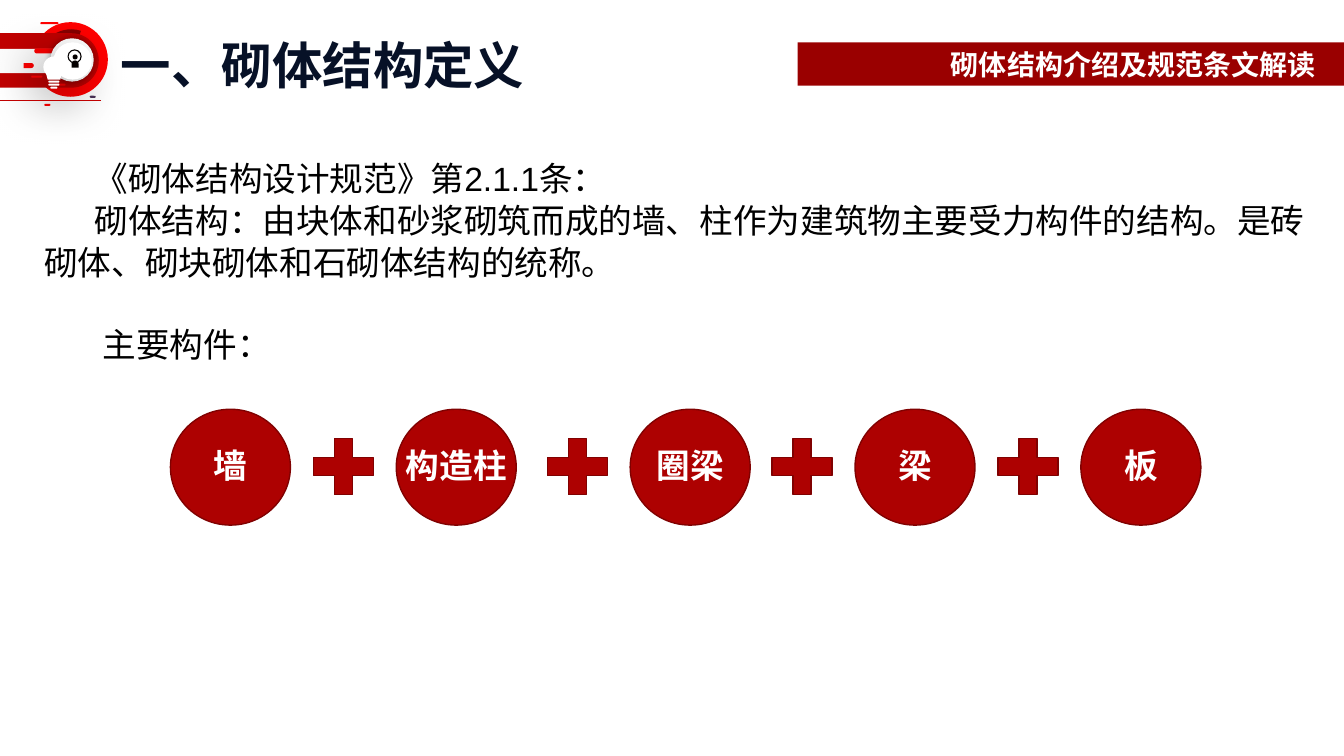
"""Build the slide defining masonry structure and its main members."""
from lxml import etree
from pptx import Presentation
from pptx.dml.color import RGBColor
from pptx.enum import shapes, text
from pptx.oxml import ns
from pptx.util import Inches, Pt

CJK = "Noto Sans CJK SC"
MSO = shapes.MSO_SHAPE
ALIGN = text.PP_ALIGN
ANCHOR = text.MSO_ANCHOR
RED, BRICK, EDGE, INK, WHITE = "FF0000", "AD0101", "800101", "040000", "FFFFFF"

TITLE = "一、砌体结构定义"
BANNER = "砌体结构介绍及规范条文解读"
DEFINITION = [
    "《砌体结构设计规范》第2.1.1条：",
    "砌体结构：由块体和砂浆砌筑而成的墙、柱作为建筑物主要受力构件的结构。是砖砌体、砌块砌体和石砌体结构的统称。",
]
MEMBERS_HEADING = ["主要构件："]
MEMBERS = [("墙", 1.69), ("构造柱", 3.93), ("圈梁", 6.25), ("梁", 8.48), ("板", 10.72)]

PILL, TAB, OVAL = MSO.ROUNDED_RECTANGLE, MSO.ROUND_2_SAME_RECTANGLE, MSO.OVAL
EMBLEM = [
    (OVAL, (0.33, 0.22, 0.74, 0.74), RED, {}),
    (PILL, (0.89, 0.95, 0.06, 0.02), "4A3359", {"adj": [0.5]}),
    (PILL, (0.44, 1.03, 0.06, 0.02), RED, {"adj": [0.5]}),
    (MSO.PIE, (0.39, 0.29, 0.63, 0.63), "860000", {"rot": 180, "adj": [0, 64.8]}),
    (PILL, (0.4, 0.22, 0.18, 0.02), RED, {"adj": [0.5]}),
    (TAB, (0.22, 0.11, 0.54, 0.98), "C00000", {"rot": 90, "adj": [0.5, 0]}),
    (TAB, (0.29, 0.19, 0.24, 0.83), "FCFCFC", {"rot": 90, "adj": [0.5, 0]}),
    (TAB, (0.26, 0.6, 0.05, 0.1), RED, {"rot": 90, "adj": [0.5, 0]}),
    (PILL, (0.34, 0.48, 0.3, 0.05), RED, {"adj": [0.5]}),
    (PILL, (0.31, 0.75, 0.11, 0.02), RED, {"adj": [0.5]}),
    (PILL, (0.54, 0.83, 0.11, 0.02), RED, {"adj": [0.5]}),
    (OVAL, (0.5, 0.38, 0.43, 0.43), WHITE, {"shadow": (40, 5, 0, 0)}),
    (OVAL, (0.53, 0.42, 0.38, 0.37), WHITE, {"shadow": (60, 37, 16, 130)}),
]
SEARCH = [
    (OVAL, (0.72, 0.54, 0.05, 0.05), INK, {}),
    (TAB, (0.71, 0.6, 0.07, 0.07), INK, {"adj": [0.5, 0]}),
    (MSO.DONUT, (0.67, 0.49, 0.14, 0.14), INK, {"adj": [0.08]}),
]
HANDLE = [(0.68, 0.61), (0.62, 0.66), (0.64, 0.68), (0.69, 0.63)]
BULB = [
    (OVAL, (0.43, 0.56, 0.21, 0.21), WHITE, {}),
    (MSO.TRAPEZOID, (0.45, 0.7, 0.17, 0.09), WHITE, {"rot": 180}),
    (PILL, (0.48, 0.8, 0.11, 0.02), WHITE, {"adj": [0.5]}),
    (PILL, (0.48, 0.83, 0.11, 0.02), WHITE, {"adj": [0.5]}),
    (PILL, (0.5, 0.86, 0.07, 0.02), WHITE, {"adj": [0.5]}),
]
FILAMENT = [(0.5, 0.78), (0.5, 0.73), (0.47, 0.68), (0.6, 0.68), (0.57, 0.73), (0.56, 0.78)]


def rgb(value):
    """Turn a hex string into a colour."""
    return RGBColor.from_string(value)


def paint(sp, fill=None, line=None, width=1):
    """Set fill and line, and drop the theme shadow."""
    sp.shadow.inherit = False
    if fill:
        sp.fill.solid()
        sp.fill.fore_color.rgb = rgb(fill)
    else:
        sp.fill.background()
    if line:
        sp.line.color.rgb = rgb(line)
        sp.line.width = Pt(width)
    else:
        sp.line.fill.background()


def cast_shadow(sp, alpha, blur, dist, angle):
    """Give a shape a soft outer black shadow."""
    effects = sp._element.spPr.find(ns.qn("a:effectLst"))
    shadow = etree.SubElement(effects, ns.qn("a:outerShdw"), blurRad=str(Pt(blur)),
                              dist=str(Pt(dist)), dir=str(angle * 60000), rotWithShape="0")
    color = etree.SubElement(shadow, ns.qn("a:srgbClr"), val="000000")
    etree.SubElement(color, ns.qn("a:alpha"), val=str(alpha * 1000))


def add_preset(parent, kind, box, fill, line=None, rot=0, adj=(), shadow=None):
    """Add one painted preset shape."""
    sp = parent.add_shape(kind, *map(Inches, box))
    sp.rotation = rot
    for i, value in enumerate(adj):
        sp.adjustments[i] = value
    paint(sp, fill, line)
    if shadow:
        cast_shadow(sp, *shadow)
    return sp


def add_outline(parent, points, closed, **look):
    """Add a polygon or an open polyline."""
    builder = parent.build_freeform(*points[0], scale=Inches(1))
    builder.add_line_segments(points[1:], close=closed)
    paint(builder.convert_to_shape(), **look)


def write(sp, lines, size, color, font="Arial", bold=False, align=ALIGN.LEFT,
          anchor=ANCHOR.MIDDLE, wrap=True, indent=0, spacing=None, margins=None):
    """Fill a shape with formatted paragraphs."""
    tf = sp.text_frame
    tf.word_wrap = wrap
    tf.vertical_anchor = anchor
    if margins:
        tf.margin_left, tf.margin_top, tf.margin_right, tf.margin_bottom = map(Inches, margins)
    for i, line in enumerate(lines):
        p = tf.add_paragraph() if i else tf.paragraphs[0]
        p.alignment = align
        if indent:
            p._p.get_or_add_pPr().set("indent", str(Inches(indent)))
        if spacing:
            p.line_spacing = Pt(spacing)
        r = p.add_run()
        r.text = line
        r.font.name, r.font.size, r.font.bold = font, Pt(size), bold
        r.font.color.rgb = rgb(color)
        latin = r._r.get_or_add_rPr().find(ns.qn("a:latin"))
        latin.addnext(latin.makeelement(ns.qn("a:ea"), {"typeface": CJK}))


def add_emblem(s):
    """Draw the ring, magnifier and bulb beside the title."""
    parent = s.shapes.add_group_shape().shapes
    for kind, box, fill, look in EMBLEM + SEARCH + BULB:
        add_preset(parent, kind, box, fill, **look)
    add_outline(parent, HANDLE, True, fill=INK)
    add_outline(parent, FILAMENT, False, line="C00000", width=0.75)


def add_members(s):
    """Draw the member circles joined by plus signs."""
    for i, (name, left) in enumerate(MEMBERS):
        if i:
            add_preset(s.shapes, MSO.MATH_PLUS, (left - 0.93, 4.25, 0.81, 0.76), BRICK, EDGE)
        sp = add_preset(s.shapes, OVAL, (left, 4.06, 1.19, 1.15), BRICK, EDGE)
        write(sp, [name], 24, WHITE, bold=True, align=ALIGN.CENTER, wrap=False,
              margins=(0, 0, 0, 0.04))


def main():
    """Assemble and save the slide."""
    prs = Presentation()
    prs.slide_width, prs.slide_height = Inches(13.33), Inches(7.5)
    s = prs.slides.add_slide(prs.slide_layouts[5])
    add_emblem(s)
    title = s.shapes.title
    title.left, title.top, title.width, title.height = map(Inches, (1.1, 0.28, 6.7, 0.71))
    write(title, [TITLE], 36, "071127", font=CJK, bold=True)
    banner = add_preset(s.shapes, MSO.RECTANGLE, (7.91, 0.42, 5.42, 0.43), "9A0000")
    write(banner, [BANNER], 20, WHITE, font="Calibri", bold=True, align=ALIGN.RIGHT,
          margins=(0, 0, 0.28, 0))
    for lines, box in ((DEFINITION, (0.34, 1.5, 12.82, 1.36)),
                       (MEMBERS_HEADING, (0.42, 3.15, 12.82, 0.52))):
        write(s.shapes.add_textbox(*map(Inches, box)), lines, 24, "000000",
              anchor=ANCHOR.TOP, indent=0.5, spacing=30)
    add_members(s)
    prs.save("out.pptx")


if __name__ == "__main__":
    main()
